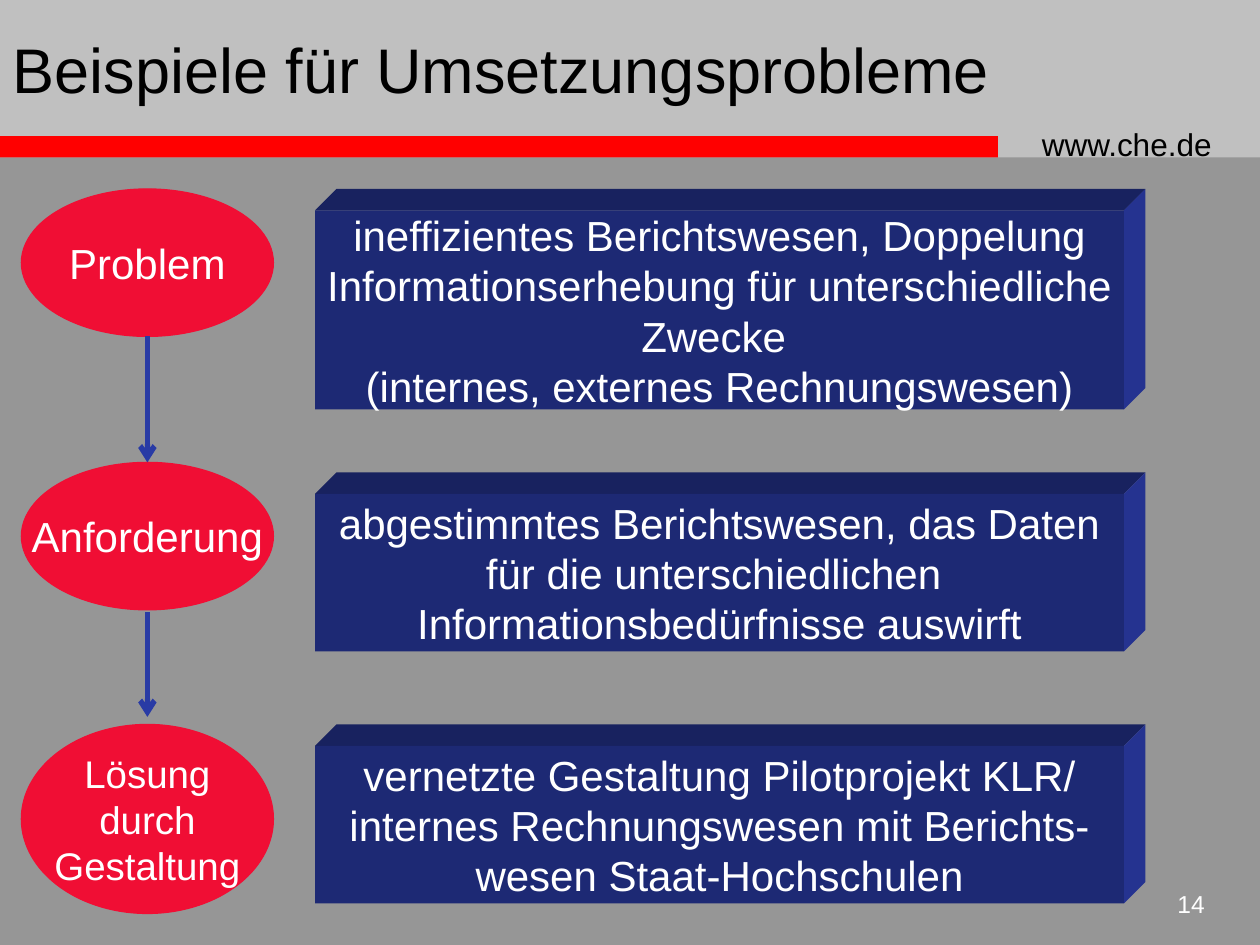
from dataclasses import dataclass

import pptx
import pptx.dml.color
import pptx.enum.shapes
import pptx.enum.text
import pptx.oxml.ns
import pptx.util
from lxml import etree

Inches = pptx.util.Inches
Pt = pptx.util.Pt
RGB = pptx.dml.color.RGBColor.from_string
Shapes = pptx.enum.shapes.MSO_SHAPE
Align = pptx.enum.text.PP_ALIGN
Anchor = pptx.enum.text.MSO_ANCHOR


@dataclass(frozen=True)
class Theme:
    font: str = "Arial"
    background: str = "969696"
    header: str = "C0C0C0"
    bar: str = "FF0000"
    stage: str = "F00E34"
    arrow: str = "293BA5"
    box_front: str = "1D2974"
    box_top: str = "18225F"
    box_side: str = "253390"
    dark_text: str = "000000"
    light_text: str = "FFFFFF"
    title_size: int = 36
    text_size: int = 24
    small_stage_size: int = 22
    address_size: int = 18
    number_size: int = 14


@dataclass(frozen=True)
class Step:
    label: str
    label_size: int
    oval_top: float
    oval_height: float
    text: str
    box_top: float
    box_height: float


THEME = Theme()
OVAL_LEFT, OVAL_WIDTH = 0.17, 2.0
BOX_LEFT, BOX_WIDTH, BOX_DEPTH = 2.5, 6.42, 0.17

STEPS = [
    Step("Problem", THEME.text_size, 1.5, 1.17,
         "ineffizientes Berichtswesen, Doppelung\n"
         "Informationserhebung für unterschiedliche\n"
         "Zwecke \n(internes, externes Rechnungswesen)", 1.67, 1.58),
    Step("Anforderung", THEME.text_size, 3.67, 1.17,
         "abgestimmtes Berichtswesen, das Daten\n"
         "für die unterschiedlichen \n"
         "Informationsbedürfnisse auswirft", 3.92, 1.25),
    Step("Lösung\ndurch\nGestaltung", THEME.small_stage_size, 5.75, 1.5,
         "vernetzte Gestaltung Pilotprojekt KLR/\n"
         "internes Rechnungswesen mit Berichts-\n"
         "wesen Staat-Hochschulen", 5.92, 1.25),
]
ARROW_SPANS = [(2.67, 3.67), (4.86, 5.69)]


def write(shape, text: str, size: int, color: str, align, anchor, wrap: bool) -> None:
    frame = shape.text_frame
    frame.text = text
    frame.word_wrap = wrap
    frame.vertical_anchor = anchor
    for paragraph in frame.paragraphs:
        paragraph.alignment = align
        for run in paragraph.runs:
            run.font.name = THEME.font
            run.font.size = Pt(size)
            run.font.color.rgb = RGB(color)


def paint(shape, color: str) -> None:
    shape.shadow.inherit = False
    shape.fill.solid()
    shape.fill.fore_color.rgb = RGB(color)
    shape.line.fill.background()


def add_block(slide, kind, left: float, top: float, width: float, height: float, color: str):
    block = slide.shapes.add_shape(kind, Inches(left), Inches(top), Inches(width), Inches(height))
    paint(block, color)
    return block


def add_label(slide, text: str, left: float, top: float, width: float, height: float,
              size: int, color: str, align) -> None:
    label = slide.shapes.add_textbox(Inches(left), Inches(top), Inches(width), Inches(height))
    write(label, text, size, color, align, Anchor.TOP, True)


def add_face(slide, corners: list[tuple[float, float]], color: str) -> None:
    points = [(Inches(x), Inches(y)) for x, y in corners]
    builder = slide.shapes.build_freeform(*points[0])
    builder.add_line_segments(points[1:], close=True)
    paint(builder.convert_to_shape(), color)


def add_raised_box(slide, step: Step) -> None:
    left, top = BOX_LEFT, step.box_top
    right, bottom = left + BOX_WIDTH, top + step.box_height
    back_top, back_right = top - BOX_DEPTH, right + BOX_DEPTH
    add_face(slide, [(left, top), (left + BOX_DEPTH, back_top),
                     (back_right, back_top), (right, top)], THEME.box_top)
    add_face(slide, [(right, top), (back_right, back_top),
                     (back_right, bottom - BOX_DEPTH), (right, bottom)], THEME.box_side)
    front = add_block(slide, Shapes.RECTANGLE, left, top, BOX_WIDTH, step.box_height,
                      THEME.box_front)
    write(front, step.text, THEME.text_size, THEME.light_text, Align.CENTER, Anchor.MIDDLE, False)


def add_stage(slide, step: Step) -> None:
    oval = add_block(slide, Shapes.OVAL, OVAL_LEFT, step.oval_top, OVAL_WIDTH,
                     step.oval_height, THEME.stage)
    oval.line.color.rgb = RGB(THEME.stage)
    oval.line.width = Pt(0.75)
    write(oval, step.label, step.label_size, THEME.light_text, Align.CENTER, Anchor.MIDDLE, False)


def add_arrow(slide, start: float, end: float) -> None:
    x = Inches(OVAL_LEFT + OVAL_WIDTH / 2)
    arrow = slide.shapes.add_connector(pptx.enum.shapes.MSO_CONNECTOR.STRAIGHT,
                                       x, Inches(start), x, Inches(end))
    arrow.line.color.rgb = RGB(THEME.arrow)
    arrow.line.width = Pt(3)
    qn = pptx.oxml.ns.qn
    properties = arrow._element.spPr
    etree.SubElement(properties.find(qn("a:ln")), qn("a:tailEnd"), type="arrow")
    etree.SubElement(properties, qn("a:effectLst"))


def main() -> None:
    deck = pptx.Presentation()
    deck.slide_width, deck.slide_height = Inches(10), Inches(7.5)
    slide = deck.slides.add_slide(deck.slide_layouts[5])
    slide.background.fill.solid()
    slide.background.fill.fore_color.rgb = RGB(THEME.background)

    # Header band, red bar, web address and page number
    add_block(slide, Shapes.RECTANGLE, 0, 0, 10, 1.25, THEME.header)
    add_block(slide, Shapes.RECTANGLE, -0.01, 1.08, 7.93, 0.17, THEME.bar)
    add_label(slide, "www.che.de", 8.17, 0.94, 1.75, 0.4,
              THEME.address_size, THEME.dark_text, Align.LEFT)
    add_label(slide, "14", 9.08, 7.01, 0.58, 0.42,
              THEME.number_size, THEME.light_text, Align.RIGHT)

    # Title, brought in front of the header band
    title = slide.shapes.title
    title.left, title.top = Inches(0), Inches(0)
    title.width, title.height = Inches(8.08), Inches(1.08)
    write(title, "Beispiele für Umsetzungsprobleme", THEME.title_size, THEME.dark_text,
          Align.LEFT, Anchor.MIDDLE, True)
    slide.shapes._spTree.append(title._element)

    # Stages on the left, linked by arrows, each with its explanation
    for step in STEPS:
        add_stage(slide, step)
    for start, end in ARROW_SPANS:
        add_arrow(slide, start, end)
    for step in STEPS:
        add_raised_box(slide, step)

    deck.save("out.pptx")


if __name__ == "__main__":
    main()
